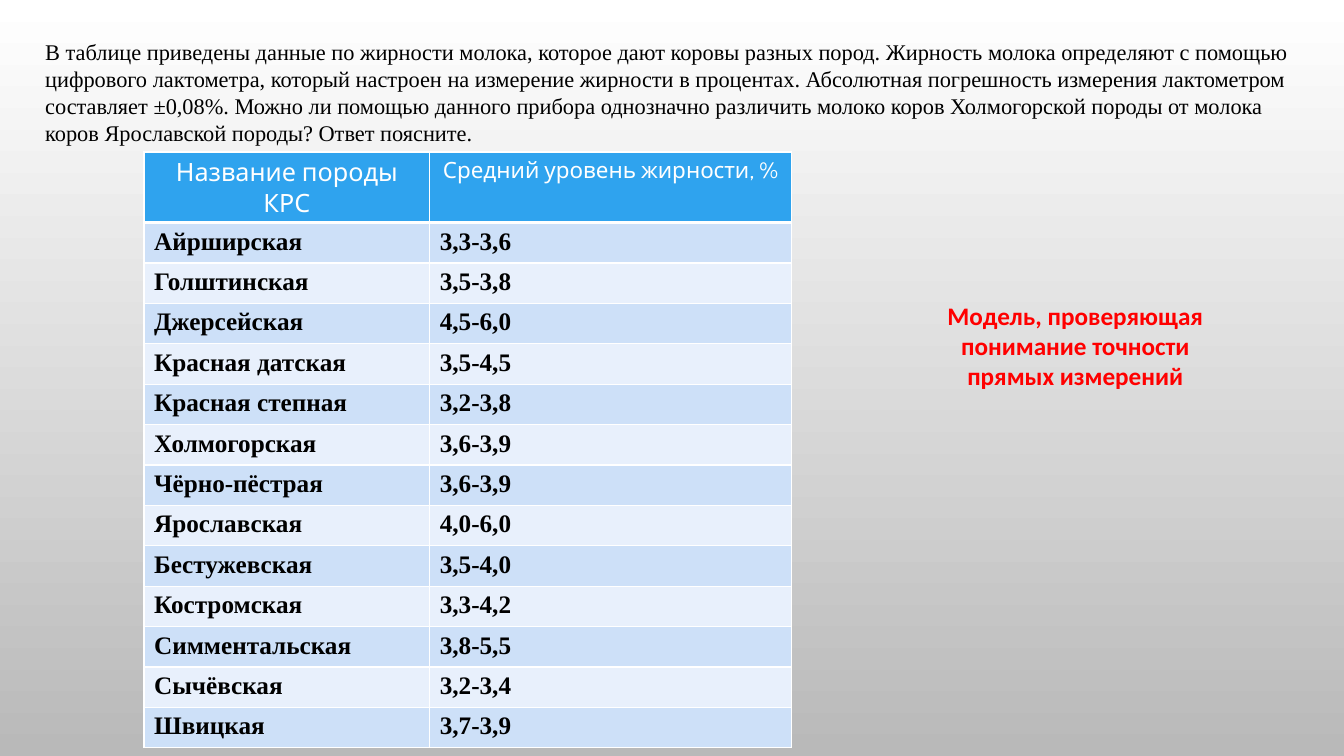
from dataclasses import dataclass

from lxml import etree
from pptx import Presentation
from pptx import util as u
from pptx.dml.color import RGBColor
from pptx.enum import text as t
from pptx.oxml import ns


@dataclass(frozen=True)
class Theme:
    top: str = "FFFFFF"
    base: str = "B9B9B9"
    head: str = "2FA3EE"
    bands: tuple = ("CDE0F8", "E8F0FC")
    line: str = "FFFFFF"
    ink: str = "000000"
    light: str = "FFFFFF"
    accent: str = "FF0000"
    serif: str = "Times New Roman"
    sans: str = "Calibri"
    title: str = "Cabin"
    small: int = 16
    large: int = 18


THEME = Theme()

TASK = (
    "В таблице приведены данные по жирности молока, которое дают коровы разных пород. "
    "Жирность молока определяют с помощью цифрового лактометра, который настроен на "
    "измерение жирности в процентах. Абсолютная погрешность измерения лактометром "
    "составляет ±0,08%. Можно ли помощью данного прибора однозначно различить молоко "
    "коров Холмогорской породы от молока коров Ярославской породы? Ответ поясните."
)
NOTE = "Модель, проверяющая понимание точности прямых измерений"
HEADS = (("Название породы КРС", THEME.large), ("Средний уровень жирности, %", THEME.small))
BREEDS = (
    ("Айрширская", "3,3-3,6"),
    ("Голштинская", "3,5-3,8"),
    ("Джерсейская", "4,5-6,0"),
    ("Красная датская", "3,5-4,5"),
    ("Красная степная", "3,2-3,8"),
    ("Холмогорская", "3,6-3,9"),
    ("Чёрно-пёстрая", "3,6-3,9"),
    ("Ярославская", "4,0-6,0"),
    ("Бестужевская", "3,5-4,0"),
    ("Костромская", "3,3-4,2"),
    ("Симментальская", "3,8-5,5"),
    ("Сычёвская", "3,2-3,4"),
    ("Швицкая", "3,7-3,9"),
)


def write(frame, words, size=THEME.large, font=THEME.serif, color=THEME.ink,
          bold=False, align=t.PP_ALIGN.LEFT):
    para = frame.paragraphs[0]
    para.alignment = align
    run = para.add_run()
    run.text = words
    run.font.size = u.Pt(size)
    run.font.name = font
    run.font.bold = bold
    run.font.color.rgb = RGBColor.from_string(color)


def add_text(slide, box, words, **style):
    frame = slide.shapes.add_textbox(*map(u.Cm, box)).text_frame
    frame.word_wrap = True
    frame.auto_size = t.MSO_AUTO_SIZE.SHAPE_TO_FIT_TEXT
    write(frame, words, **style)


def add_edges(cell, top=1, bottom=1):
    """Draw the four borders of a cell, with widths in points."""
    props = cell._tc.get_or_add_tcPr()
    widths = {"a:lnL": 1, "a:lnR": 1, "a:lnT": top, "a:lnB": bottom}
    for spot, (tag, width) in enumerate(widths.items()):
        edge = etree.Element(ns.qn(tag), w=str(u.Pt(width)))
        fill = etree.SubElement(edge, ns.qn("a:solidFill"))
        etree.SubElement(fill, ns.qn("a:srgbClr"), val=THEME.line)
        props.insert(spot, edge)


def paint(cell, color):
    cell.fill.solid()
    cell.fill.fore_color.rgb = RGBColor.from_string(color)


def add_grid(slide, box, split, head):
    """Place the breed table: split is the first column's width, head the top row's height."""
    left, top, width, height = box
    count = len(BREEDS)
    table = slide.shapes.add_table(count + 1, 2, *map(u.Cm, box)).table
    table.horz_banding = False
    for col, size in zip(table.columns, (split, width - split)):
        col.width = u.Cm(size)
    for num, row in enumerate(table.rows):
        row.height = u.Cm((height - head) / count if num else head)

    for col, (words, size) in enumerate(HEADS):
        cell = table.cell(0, col)
        paint(cell, THEME.head)
        add_edges(cell, bottom=3)
        write(cell.text_frame, words, size=size, font=THEME.title,
              color=THEME.light, align=t.PP_ALIGN.CENTER)
    for num, breed in enumerate(BREEDS):
        for col, words in enumerate(breed):
            cell = table.cell(num + 1, col)
            paint(cell, THEME.bands[num % 2])
            add_edges(cell, top=1 if num else 3)
            write(cell.text_frame, words, bold=True)


def shade(slide):
    fill = slide.background.fill
    fill.gradient()
    fill.gradient_angle = 270
    for stop, color, place in zip(fill.gradient_stops, (THEME.top, THEME.base), (0, 1)):
        stop.color.rgb = RGBColor.from_string(color)
        stop.position = place


def add_task(deck):
    slide = deck.slides.add_slide(deck.slide_layouts.get_by_name("Blank"))
    shade(slide)
    add_text(slide, (0.89, 0.84, 31.98, 3), TASK, size=THEME.small)
    add_grid(slide, (3.63, 3.83, 16.32, 15.02), split=7.2, head=1.78)
    add_text(slide, (23.01, 7.44, 8.18, 3.33), NOTE, font=THEME.sans,
             color=THEME.accent, bold=True, align=t.PP_ALIGN.CENTER)


def main():
    deck = Presentation()
    deck.slide_width, deck.slide_height = u.Cm(33.87), u.Cm(19.05)
    add_task(deck)
    deck.save("out.pptx")


if __name__ == "__main__":
    main()
